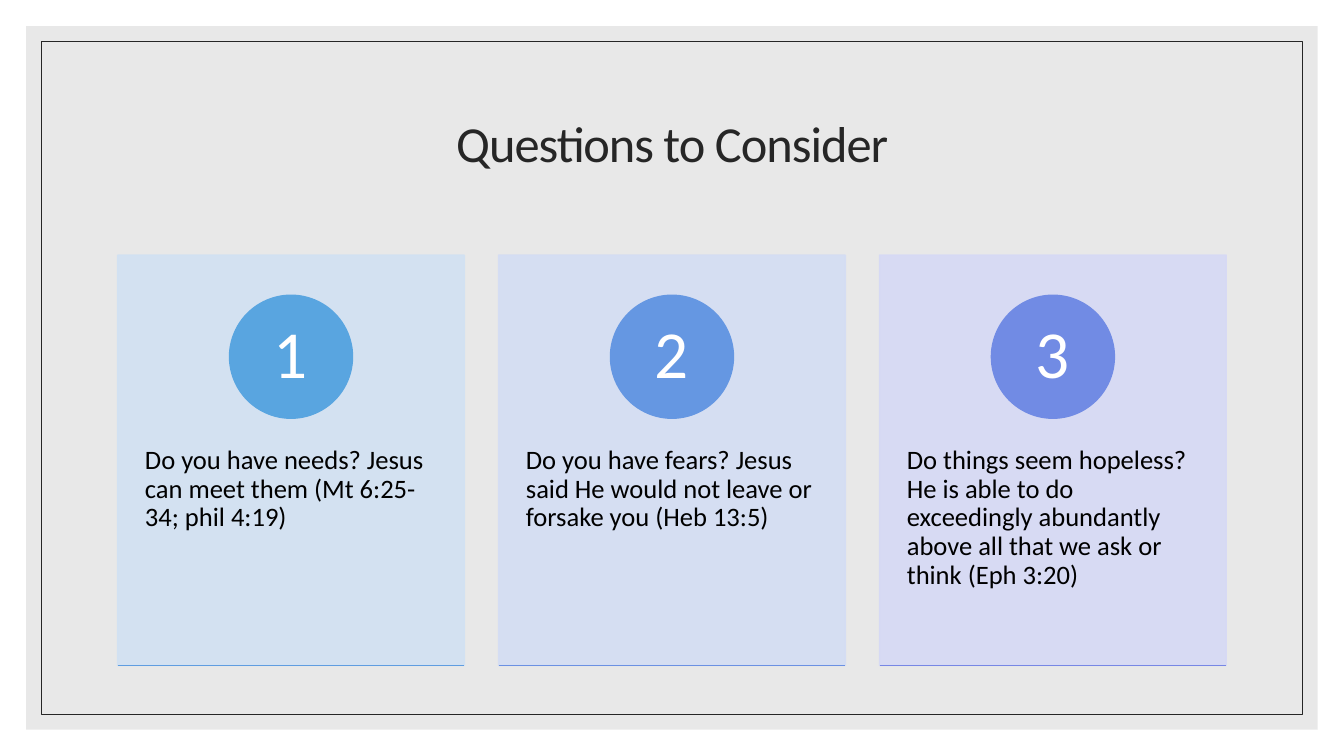
from pptx import Presentation
from pptx import util as u
from pptx.dml.color import RGBColor
from pptx.enum import shapes, text
from pptx.oxml.ns import qn
from lxml import etree

# Content
TITLE = "Questions to Consider"
CARDS = [
    {"question": "Do you have needs? Jesus can meet them (Mt 6:25-34; phil 4:19)",
     "panel": "D1E1F3", "circle": "59A5E0", "rule": "5F9DE1"},
    {"question": "Do you have fears? Jesus said He would not leave or forsake you (Heb 13:5)",
     "panel": "D4DDF4", "circle": "6597E2", "rule": "6B91E3"},
    {"question": "Do things seem hopeless? He is able to do exceedingly abundantly "
                 "above all that we ask or think (Eph 3:20)",
     "panel": "D6D9F5", "circle": "718BE4", "rule": "7787E5"},
]
COLORS = {"backdrop": "D9D9D9", "dark": "262626", "white": "FFFFFF", "black": "000000"}

# Formats
TITLE_FONT = {"name": "Calibri", "size": u.Pt(36), "bold": False}
NUMBER_FONT = {"name": "Calibri", "size": u.Pt(48)}
QUESTION_FONT = {"name": "Calibri", "size": u.Pt(19)}
CENTERED = {"alignment": text.PP_ALIGN.CENTER, "line_spacing": 0.9}
LEFT = {"alignment": text.PP_ALIGN.LEFT, "line_spacing": 0.9}
MIDDLE_FRAME = {"word_wrap": True, "auto_size": text.MSO_AUTO_SIZE.NONE,
                "vertical_anchor": text.MSO_ANCHOR.MIDDLE}
NUMBER_FRAME = {**MIDDLE_FRAME, "margin_left": 0, "margin_right": 0,
                "margin_top": 0, "margin_bottom": 0}
QUESTION_FRAME = {**MIDDLE_FRAME, "vertical_anchor": text.MSO_ANCHOR.TOP,
                  "margin_left": u.Cm(0.69), "margin_right": u.Cm(0.69),
                  "margin_top": u.Cm(0.91), "margin_bottom": u.Cm(0.91)}

# Layout in centimetres
SLIDE_W, SLIDE_H = 33.87, 19.05
CARD_W, CARD_H, CARD_TOP, CARD_GAP = 8.74, 10.34, 6.43, 0.86
CIRCLE, CIRCLE_TOP = 3.1, 7.44
QUESTION_TOP, QUESTION_H = 10.34, 6.2
CARDS_LEFT = (SLIDE_W - len(CARDS) * CARD_W - (len(CARDS) - 1) * CARD_GAP) / 2


def box(left, top, width, height):
    return [u.Cm(value) for value in (left, top, width, height)]


def inset_box(inset):
    return box(inset, inset, SLIDE_W - 2 * inset, SLIDE_H - 2 * inset)


def apply(target, values):
    for name, value in values.items():
        setattr(target, name, value)


def add_shape(slide, kind, bounds, fill=None, line=None, width=1, opacity=100):
    shape = slide.shapes.add_shape(kind, *bounds)
    shape.shadow.inherit = False
    for paint, color in ((shape.fill, fill), (shape.line.fill, line)):
        if color:
            paint.solid()
            paint.fore_color.rgb = RGBColor.from_string(color)
        else:
            paint.background()
    if line:
        shape.line.width = u.Pt(width)
    if opacity < 100:
        for color in shape.element.spPr.iter(qn("a:srgbClr")):
            etree.SubElement(color, qn("a:alpha"), val=str(opacity * 1000))
    return shape


def write(shape, words, frame_format, paragraph_format, font_format, color):
    frame = shape.text_frame
    apply(frame, frame_format)
    paragraph = frame.paragraphs[0]
    apply(paragraph, paragraph_format)
    run = paragraph.add_run()
    run.text = words
    apply(run.font, font_format)
    run.font.color.rgb = RGBColor.from_string(color)
    return run


def add_card(slide, number, card):
    left = CARDS_LEFT + (number - 1) * (CARD_W + CARD_GAP)
    bottom = CARD_TOP + CARD_H
    add_shape(slide, shapes.MSO_SHAPE.RECTANGLE, box(left, CARD_TOP, CARD_W, CARD_H),
              card["panel"], card["panel"], opacity=90)
    question = slide.shapes.add_textbox(*box(left, QUESTION_TOP, CARD_W, QUESTION_H))
    write(question, card["question"], QUESTION_FRAME, LEFT, QUESTION_FONT, COLORS["black"])
    circle = add_shape(slide, shapes.MSO_SHAPE.OVAL,
                       box(left + (CARD_W - CIRCLE) / 2, CIRCLE_TOP, CIRCLE, CIRCLE),
                       card["circle"], card["circle"])
    write(circle, str(number), NUMBER_FRAME, CENTERED, NUMBER_FONT, COLORS["white"])
    rule = slide.shapes.add_connector(shapes.MSO_CONNECTOR.STRAIGHT,
                                      *box(left, bottom, left + CARD_W, bottom))
    rule.line.width = u.Pt(1)
    rule.line.color.rgb = RGBColor.from_string(card["rule"])
    etree.SubElement(rule.element.spPr, qn("a:effectLst"))


def main():
    presentation = Presentation()
    presentation.slide_width, presentation.slide_height = u.Cm(SLIDE_W), u.Cm(SLIDE_H)
    slide = presentation.slides.add_slide(presentation.slide_layouts[5])

    # Backdrop and thin frame
    add_shape(slide, shapes.MSO_SHAPE.RECTANGLE, inset_box(0.66), COLORS["backdrop"], opacity=60)
    add_shape(slide, shapes.MSO_SHAPE.RECTANGLE, inset_box(1.04), line=COLORS["dark"], width=0.5)

    # Title, brought in front of the backdrop
    title = slide.shapes.title
    title.element.getparent().append(title.element)
    title.left, title.top, title.width, title.height = box(2.97, 1.78, 27.94, 3.81)
    run = write(title, TITLE, MIDDLE_FRAME, CENTERED, TITLE_FONT, COLORS["dark"])
    run.font.element.set("spc", "-70") if hasattr(run.font, "element") else \
        run._r.get_or_add_rPr().set("spc", "-70")

    # Numbered cards
    for number, card in enumerate(CARDS, start=1):
        add_card(slide, number, card)

    presentation.save("out.pptx")


if __name__ == "__main__":
    main()
